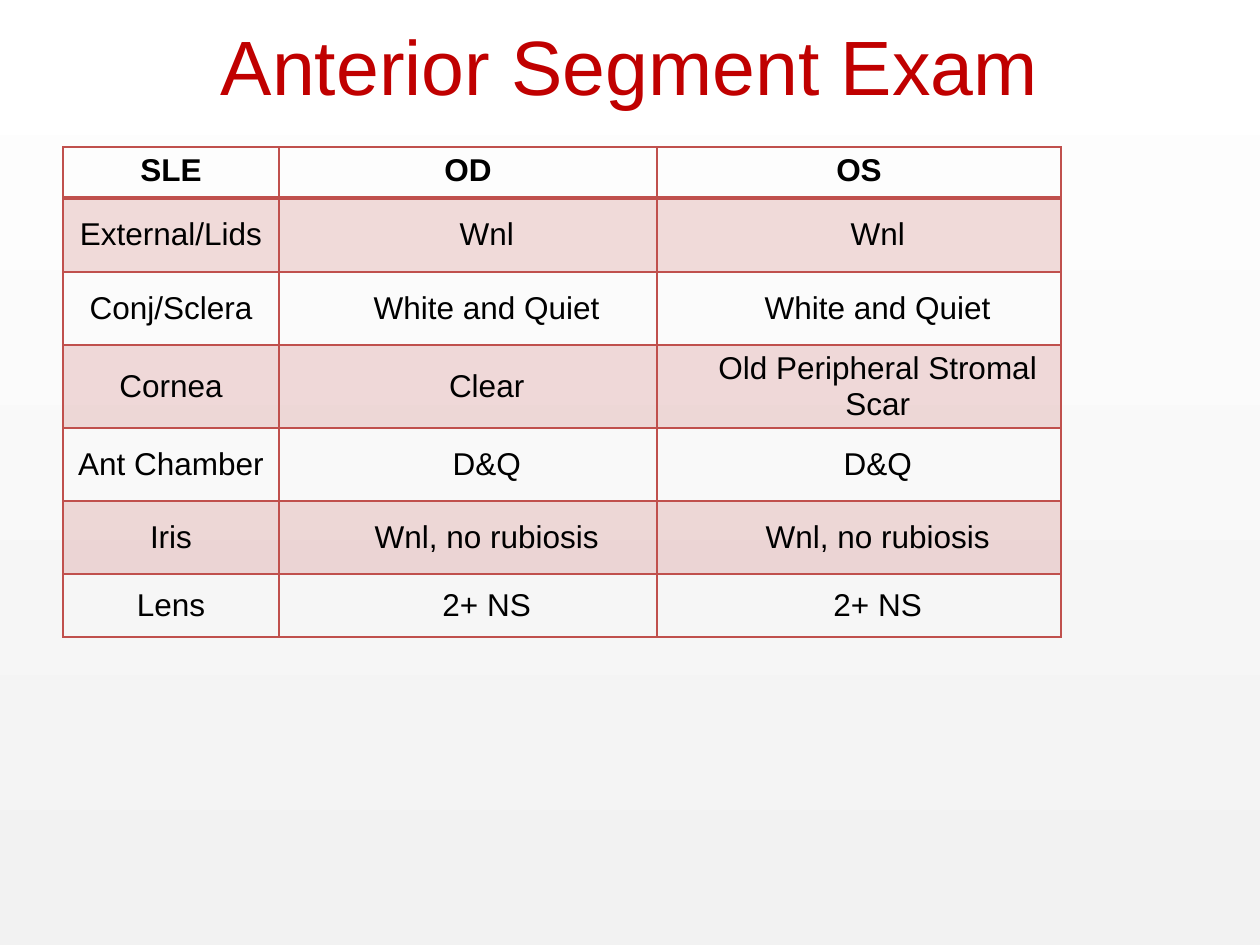
from lxml.etree import SubElement
from pptx import Presentation
from pptx.dml.color import RGBColor
from pptx.enum.text import MSO_ANCHOR, PP_ALIGN
from pptx.oxml.ns import qn
from pptx.util import Pt

EMU_PER_PX = 914400 / 126
RED = "C0504D"
COLUMN_WIDTHS = [216, 378, 404]
ROW_HEIGHTS = [51, 74, 73, 73, 73, 73, 63]
FINDINGS = [
    ("SLE", "OD", "OS"),
    ("External/Lids", "Wnl", "Wnl"),
    ("Conj/Sclera", "White and Quiet", "White and Quiet"),
    ("Cornea", "Clear", "Old Peripheral Stromal Scar"),
    ("Ant Chamber", "D&Q", "D&Q"),
    ("Iris", "Wnl, no rubiosis", "Wnl, no rubiosis"),
    ("Lens", "2+ NS", "2+ NS"),
]


def px(length):
    return round(length * EMU_PER_PX)


def color(hex_value):
    return RGBColor.from_string(hex_value)


def format_text(text_frame, hex_value, **font_values):
    paragraph = text_frame.paragraphs[0]
    paragraph.alignment = PP_ALIGN.CENTER
    for name, value in {"name": "Arial", **font_values}.items():
        setattr(paragraph.font, name, value)
    paragraph.font.color.rgb = color(hex_value)


def paint_background(slide):
    fill = slide.background.fill
    fill.gradient()
    fill.gradient_angle = 90
    for stop, shade in zip(fill.gradient_stops, ("F2F2F2", "FFFFFF")):
        stop.color.rgb = color(shade)


def place_title(slide, left, top, width, height):
    title = slide.shapes.title
    box = {"left": left, "top": top, "width": width, "height": height}
    for name, value in box.items():
        setattr(title, name, px(value))
    title.text_frame.text = "Anterior Segment Exam"
    title.text_frame.vertical_anchor = MSO_ANCHOR.MIDDLE
    format_text(title.text_frame, "C00000", size=Pt(44))


def draw_borders(cell, widths):
    """Line each side with a width in points, in the order L, R, T, B."""
    properties = cell._tc.get_or_add_tcPr()
    for side, width in widths.items():
        line = SubElement(properties, qn(f"a:ln{side}"), w=str(Pt(width)))
        SubElement(SubElement(line, qn("a:solidFill")), qn("a:srgbClr"), val=RED)


def tint(cell, opacity):
    cell.fill.solid()
    cell.fill.fore_color.rgb = color(RED)
    shade = cell._tc.tcPr.find(qn("a:solidFill")).find(qn("a:srgbClr"))
    SubElement(shade, qn("a:alpha"), val=str(opacity * 1000))


def fill_cell(cell, finding, row, column):
    is_header = row == 0
    draw_borders(cell, {"L": 1, "R": 1,
                        "T": 2 if row == 1 else 1,
                        "B": 2 if is_header else 1})
    if row % 2:
        tint(cell, 20)
    else:
        cell.fill.background()
    cell.text = finding
    cell.vertical_anchor = MSO_ANCHOR.TOP if is_header else MSO_ANCHOR.MIDDLE
    if column and not is_header:
        cell.margin_left = px(50)
    format_text(cell.text_frame, "000000", size=Pt(18), bold=is_header)


def place_exam_table(slide, left, top):
    table = slide.shapes.add_table(
        len(ROW_HEIGHTS), len(COLUMN_WIDTHS), px(left), px(top),
        px(sum(COLUMN_WIDTHS)), px(sum(ROW_HEIGHTS))).table
    table.first_row = table.horz_banding = False
    for column, width in zip(table.columns, COLUMN_WIDTHS):
        column.width = px(width)
    for row, height in zip(table.rows, ROW_HEIGHTS):
        row.height = px(height)
    for row, findings in enumerate(FINDINGS):
        for column, finding in enumerate(findings):
            fill_cell(table.cell(row, column), finding, row, column)


def main():
    presentation = Presentation()
    presentation.slide_width = px(1260)
    presentation.slide_height = px(945)
    slide = presentation.slides.add_slide(presentation.slide_layouts[5])
    paint_background(slide)
    place_title(slide, 63, -14, 1134, 158)
    place_exam_table(slide, 63, 147)
    presentation.save("out.pptx")


if __name__ == "__main__":
    main()
